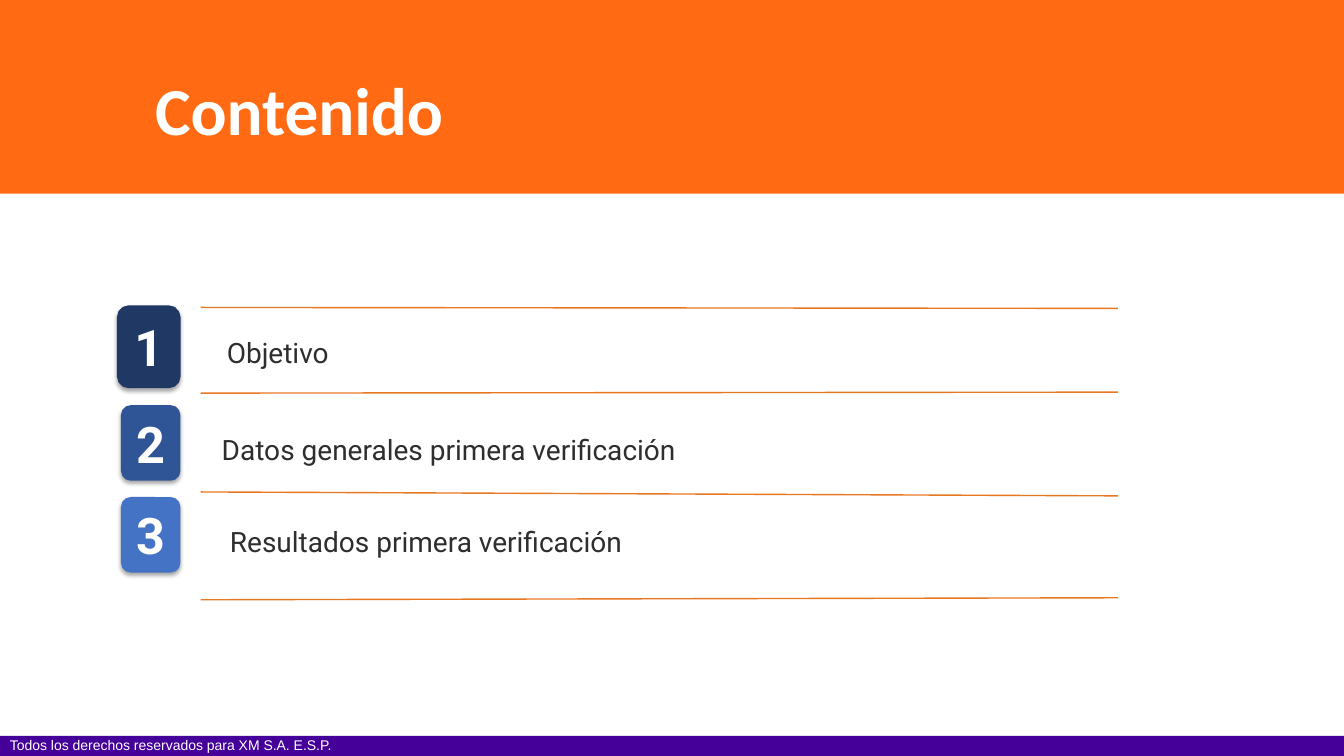
from lxml import etree
from pptx import Presentation
from pptx.dml.color import RGBColor
from pptx.enum import shapes, text
from pptx.oxml import ns
from pptx.util import Pt

WHITE = RGBColor(0xFF, 0xFF, 0xFF)
FIRE = RGBColor(0xFF, 0x6A, 0x13)
RUST = RGBColor(0xE8, 0x77, 0x22)
GRAPE = RGBColor(0x44, 0x00, 0x99)
INK = RGBColor(0x2E, 0x2E, 0x2E)
NAVY = RGBColor(0x20, 0x38, 0x64)
BLUE = RGBColor(0x2F, 0x55, 0x97)
SKY = RGBColor(0x44, 0x72, 0xC4)

WIDE, HIGH = 960, 540
TITLE = "Contenido"
NOTICE = "Todos los derechos reservados para XM S.A. E.S.P."
BANDS = [(0, 138.24, FIRE), (525.6, 14.4, GRAPE)]
TOPICS = [
    ("Objetivo", (156.2, 236.9, 168.5, 30.2), (85, 219.6, 42.5, 56.2), NAVY, 3),
    ("Datos generales primera verificación", (152.6, 306, 347.8, 94.3),
     (86.4, 289.4, 42.5, 54), BLUE, 0),
    ("Resultados primera verificación", (158.4, 371.5, 327.6, 63.4),
     (86.4, 355, 42.5, 54), SKY, 0),
]
LEFT, RIGHT = 143.3, 798.5
RULES = [(219.6, 220.3), (280.8, 280.1), (351.4, 354.2), (428.4, 427)]

deck = Presentation()
deck.slide_width, deck.slide_height = Pt(WIDE), Pt(HIGH)
page = deck.slides.add_slide(deck.slide_layouts[6])
parts = page.shapes


def write(shape, words, size=20, font="Roboto", color=INK, bold=False,
          align=text.PP_ALIGN.LEFT, anchor=text.MSO_ANCHOR.TOP,
          pad=(7.2, 3.6), space=1.0):
    frame = shape.text_frame
    frame.word_wrap = True
    frame.vertical_anchor = anchor
    frame.margin_left = frame.margin_right = Pt(pad[0])
    frame.margin_top = frame.margin_bottom = Pt(pad[1])
    line = frame.paragraphs[0]
    line.alignment = align
    line.line_spacing = space
    run = line.add_run()
    run.text = words
    run.font.size, run.font.name = Pt(size), font
    run.font.bold, run.font.color.rgb = bold, color


def box(spot):
    return parts.add_textbox(*map(Pt, spot))


def block(kind, spot, color, edge=0):
    shape = parts.add_shape(kind, *map(Pt, spot))
    shape.shadow.inherit = False
    shape.fill.solid()
    shape.fill.fore_color.rgb = color
    if edge:
        shape.line.color.rgb = color
        shape.line.width = Pt(edge)
    else:
        shape.line.fill.background()
    return shape


def shade(shape):
    glow = shape._element.spPr.find(ns.qn("a:effectLst"))
    cast = etree.SubElement(glow, ns.qn("a:outerShdw"), blurRad=str(Pt(3.1)),
                            dist=str(Pt(1.8)), dir="5400000", rotWithShape="0")
    tint = etree.SubElement(cast, ns.qn("a:srgbClr"), val="000000")
    etree.SubElement(tint, ns.qn("a:alpha"), val="35000")


for top, tall, color in BANDS:
    block(shapes.MSO_SHAPE.RECTANGLE, (0, top, WIDE, tall), color)
write(box((0, 522.7, 372.2, 19.4)), NOTICE, size=10, font="Arial", color=WHITE)
write(box((103.7, 28.8, 790.6, 104.4)), TITLE, size=48, font="Calibri",
      color=WHITE, bold=True, anchor=text.MSO_ANCHOR.MIDDLE, space=0.9)

for start, end in RULES:
    rule = parts.add_connector(shapes.MSO_CONNECTOR.STRAIGHT,
                               Pt(LEFT), Pt(start), Pt(RIGHT), Pt(end))
    rule.line.color.rgb = RUST
    rule.line.width = Pt(1)
    etree.SubElement(rule._element.spPr, ns.qn("a:effectLst"))

for count, (topic, spot, place, color, edge) in enumerate(TOPICS, 1):
    badge = block(shapes.MSO_SHAPE.ROUNDED_RECTANGLE, place, color, edge)
    shade(badge)
    write(badge, str(count), size=36, color=WHITE, bold=True,
          align=text.PP_ALIGN.CENTER, anchor=text.MSO_ANCHOR.MIDDLE)
    write(box(spot), topic, pad=(5.8, 5.8), space=0.9)

deck.save("out.pptx")
